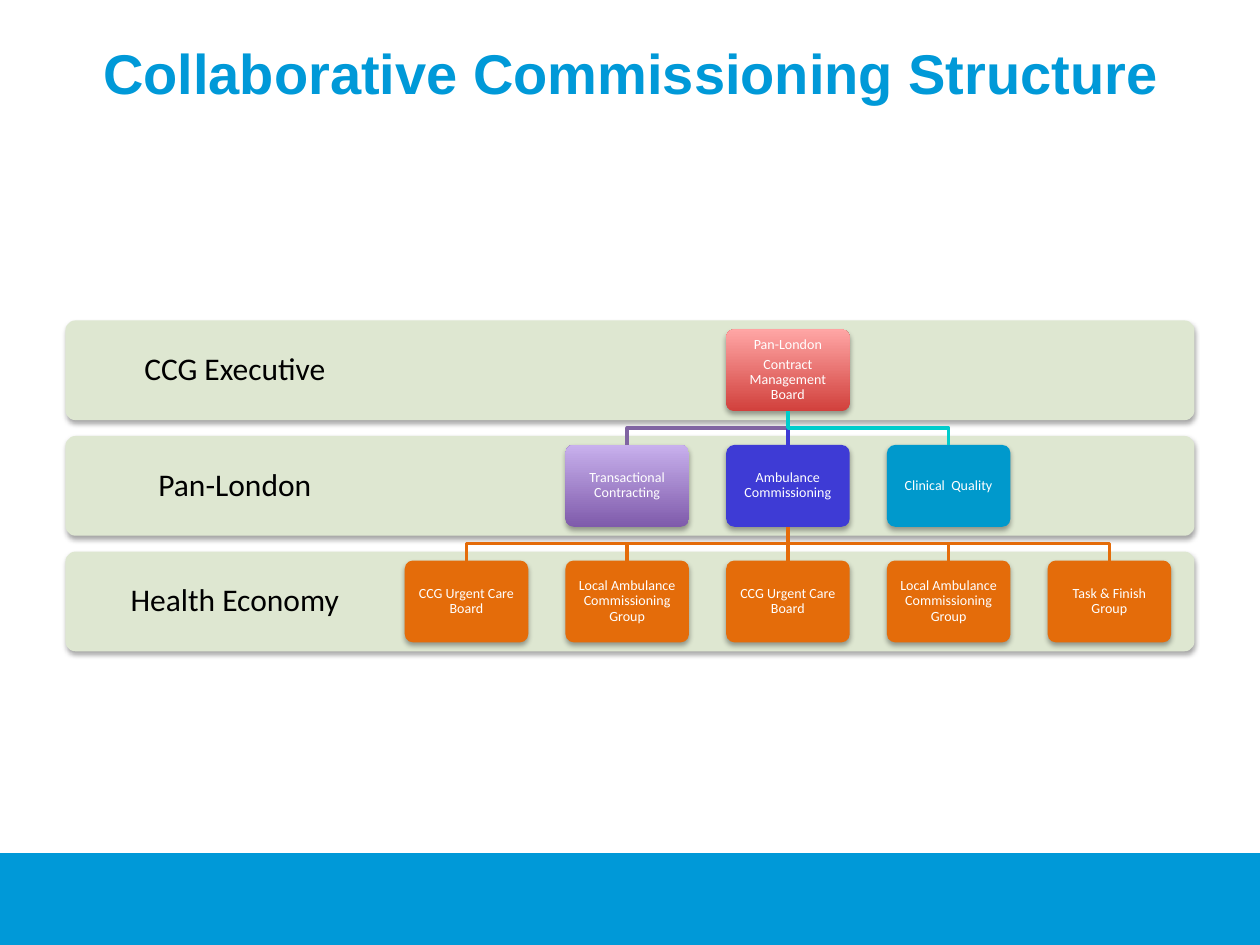
from lxml import etree
from pptx import Presentation
from pptx.dml.color import RGBColor
from pptx.enum.shapes import MSO_CONNECTOR as Connector, MSO_SHAPE as Shape
from pptx.enum.text import MSO_ANCHOR as Anchor, PP_ALIGN as Align
from pptx.oxml.ns import qn
from pptx.util import Cm, Pt

COLORS = {
    "brand": "0099D8", "band": "DEE7D1", "black": "000000", "white": "FFFFFF",
    "red": "D1403C", "pink": "FFA6A5", "purple": "7F5BAB", "lilac": "C8B0ED",
    "violet": "8064A2", "indigo": "3E3BD5", "blue": "0099CC", "cyan": "00CCCC",
    "orange": "E46C0A",
}
TITLE = "Collaborative Commissioning Structure"
BANDS = ["CCG Executive", "Pan-London", "Health Economy"]
# Each box: column, paragraphs, fill (two names make a gradient), link colour
LEVELS = [
    [(2, ["Pan-London", "Contract Management Board"], ["red", "pink"], None)],
    [
        (1, ["Transactional Contracting"], ["purple", "lilac"], "violet"),
        (2, ["Ambulance Commissioning"], ["indigo"], "indigo"),
        (3, ["Clinical  Quality"], ["blue"], "cyan"),
    ],
    [
        (column, [text], ["orange"], "orange")
        for column, text in enumerate([
            "CCG Urgent Care Board", "Local Ambulance Commissioning Group",
            "CCG Urgent Care Board", "Local Ambulance Commissioning Group",
            "Task & Finish Group",
        ])
    ],
]
PARENT_COLUMN = 2
BAND_LEFT, BAND_TOP, BAND_WIDTH, BAND_HEIGHT, BAND_PITCH = 1.32, 6.46, 22.76, 2.01, 2.33
LABEL_WIDTH, LABEL_INSET = 6.83, 0.36
BOX_LEFT, BOX_WIDTH, BOX_HEIGHT, BOX_PITCH, BOX_INSET = 8.16, 2.49, 1.65, 3.24, 0.08


def rgb(name):
    return RGBColor.from_string(COLORS[name])


def paint(shape, names):
    if len(names) == 1:
        shape.fill.solid()
        shape.fill.fore_color.rgb = rgb(names[0])
        return
    shape.fill.gradient()
    shape.fill.gradient_angle = 90
    for stop, name in zip(shape.fill.gradient_stops, names):
        stop.color.rgb = rgb(name)


def add_shadow(shape):
    effects = shape._element.spPr.find(qn("a:effectLst"))
    shadow = etree.SubElement(effects, qn("a:outerShdw"), blurRad=str(Pt(3.1)),
                              dist=str(Pt(1.8)), dir="5400000", rotWithShape="0")
    color = etree.SubElement(shadow, qn("a:srgbClr"), val=COLORS["black"])
    etree.SubElement(color, qn("a:alpha"), val="35000")


def write(shape, texts, size, color, inset, right_inset=None):
    frame = shape.text_frame
    frame.word_wrap = True
    frame.vertical_anchor = Anchor.MIDDLE
    frame.margin_left = frame.margin_top = frame.margin_bottom = Cm(inset)
    frame.margin_right = Cm(right_inset or inset)
    for index, text in enumerate(texts):
        paragraph = frame.add_paragraph() if index else frame.paragraphs[0]
        paragraph.alignment = Align.CENTER
        paragraph.line_spacing = 0.9
        paragraph.space_before = Pt(0.35 * size if index else 0)
        run = paragraph.add_run()
        run.text = text
        run.font.name = "Calibri"
        run.font.size = Pt(size)
        run.font.color.rgb = rgb(color)


def add_panel(slide, left, top, width, height, fill):
    panel = slide.shapes.add_shape(Shape.ROUNDED_RECTANGLE, Cm(left), Cm(top), Cm(width), Cm(height))
    panel.adjustments[0] = 0.1
    panel.shadow.inherit = False
    paint(panel, fill)
    panel.line.fill.background()
    add_shadow(panel)
    return panel


def add_link(slide, parent, child, color):
    start_x, end_x = (box.left + box.width // 2 for box in (parent, child))
    start_y, end_y = parent.top + parent.height, child.top
    if start_x == end_x:
        link = slide.shapes.add_connector(Connector.STRAIGHT, start_x, start_y, end_x, end_y)
        link.begin_connect(parent, 2)
        link.end_connect(child, 0)
        etree.SubElement(link._element.spPr, qn("a:effectLst"))
    else:
        middle_y = (start_y + end_y) // 2
        builder = slide.shapes.build_freeform(start_x, start_y)
        builder.add_line_segments([(start_x, middle_y), (end_x, middle_y), (end_x, end_y)], close=False)
        link = builder.convert_to_shape()
        link.fill.background()
        link.shadow.inherit = False
    link.line.color.rgb = rgb(color)
    link.line.width = Pt(2)


def add_title(slide):
    title = slide.shapes.title
    title.left, title.top, title.width, title.height = Cm(0.05), Cm(0.43), Cm(25.35), Cm(2.03)
    title.text_frame.vertical_anchor = Anchor.MIDDLE
    paragraph = title.text_frame.paragraphs[0]
    paragraph.alignment = Align.CENTER
    run = paragraph.add_run()
    run.text = TITLE
    run.font.name = "Arial"
    run.font.size = Pt(32)
    run.font.bold = True
    run.font.color.rgb = rgb("brand")


def main():
    """Build the commissioning structure slide."""
    presentation = Presentation()
    presentation.slide_width, presentation.slide_height = Cm(25.4), Cm(19.05)
    slide = presentation.slides.add_slide(presentation.slide_layouts[5])
    footer = slide.shapes.add_shape(Shape.RECTANGLE, 0, Cm(17.2), Cm(25.4), Cm(1.85))
    footer.shadow.inherit = False
    paint(footer, ["brand"])
    footer.line.fill.background()
    add_title(slide)

    band_tops = [BAND_TOP + row * BAND_PITCH for row in range(len(BANDS))]
    for label, top in zip(BANDS, band_tops):
        band = add_panel(slide, BAND_LEFT, top, BAND_WIDTH, BAND_HEIGHT, ["band"])
        write(band, [label], 18, "black", LABEL_INSET, BAND_WIDTH - LABEL_WIDTH + LABEL_INSET)

    parent = None
    for level, band_top in zip(LEVELS, band_tops):
        boxes = {}
        for column, texts, fill, link_color in level:
            box = add_panel(slide, BOX_LEFT + column * BOX_PITCH, band_top + (BAND_HEIGHT - BOX_HEIGHT) / 2,
                            BOX_WIDTH, BOX_HEIGHT, fill)
            write(box, texts, 8, "white", BOX_INSET)
            if parent is not None:
                add_link(slide, parent, box, link_color)
            boxes[column] = box
        parent = boxes[PARENT_COLUMN]
    presentation.save("out.pptx")


if __name__ == "__main__":
    main()
